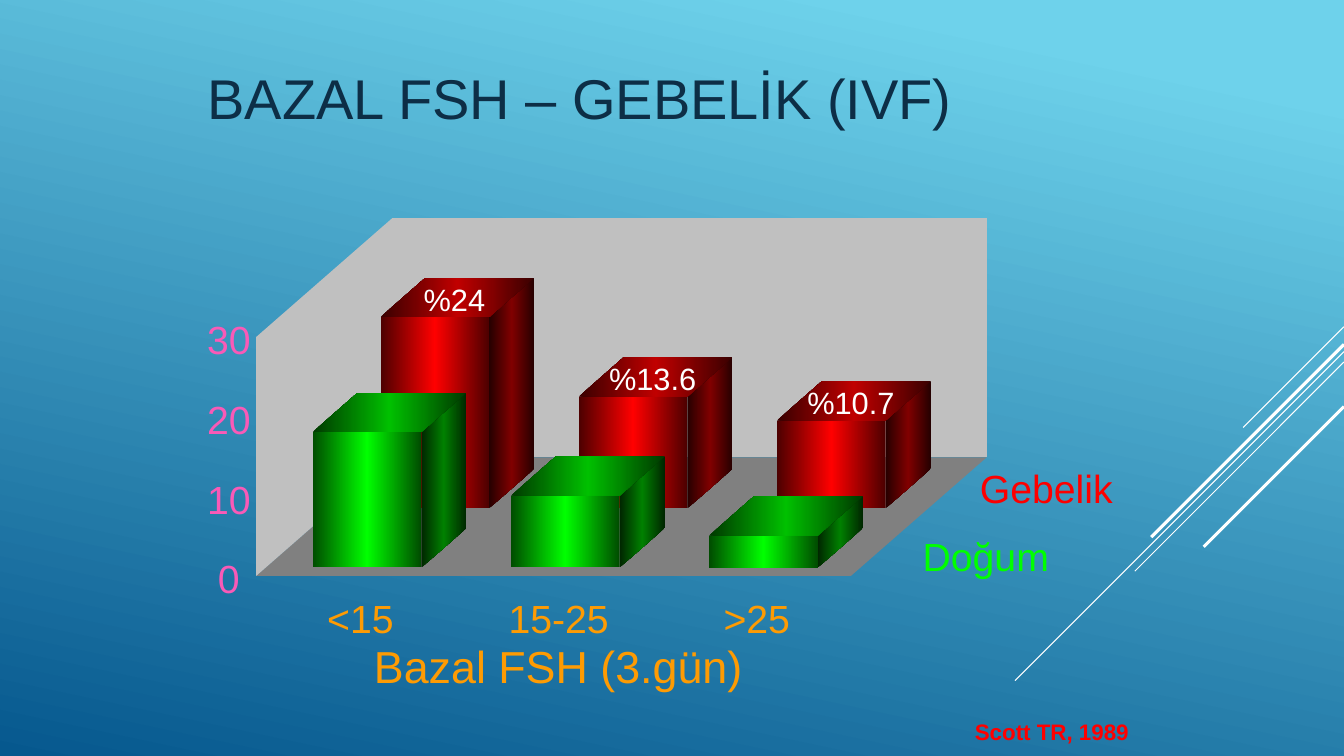
"""Build the slide on basal FSH and IVF pregnancy with a drawn 3D column diagram."""
from copy import deepcopy

from lxml import etree
from pptx import Presentation
from pptx.dml.color import RGBColor
from pptx.enum.shapes import MSO_CONNECTOR
from pptx.enum.text import MSO_ANCHOR, PP_ALIGN
from pptx.oxml.ns import qn
from pptx.util import Emu, Inches, Pt

STRAIGHT = MSO_CONNECTOR.STRAIGHT
MIDDLE = MSO_ANCHOR.MIDDLE
LEFT, CENTER = PP_ALIGN.LEFT, PP_ALIGN.CENTER

THEME = {
    "font": "Arial",
    "sky": ("6ED2EB", "06588E"),
    "title": "0D2E46", "axis": "F95AB7", "category": "FE9B03", "white": "FFFFFF",
    "birth": "00FF00", "pregnancy": "FD0000", "credit": "FF0000",
    "floor": ["808080"], "wall": ["C0C0C0"],
    "red": {"side": ["260000", "800000", "260000"],
            "front": ["4C0000", "FF0000", "4C0000"],
            "top": ["390000", "C00000", "390000"]},
    "green": {"side": ["002600", "008000", "002600"],
              "front": ["004C00", "00FF00", "004C00"],
              "top": ["003900", "00C000", "003900"]},
    "title_size": 40, "caption_size": 32, "label_size": 28,
    "value_size": 22, "credit_size": 16,
}

COLUMNS, ROWS = 80, 45
CELL = Inches(1) / 6

deck = Presentation()
deck.slide_width, deck.slide_height = Emu(int(COLUMNS * CELL)), Emu(int(ROWS * CELL))
page = deck.slides.add_slide(deck.slide_layouts[5])


def face(points, colors):
    """Draw a filled polygon; three colours make a left-to-right gradient."""
    corners = [(x * CELL, y * CELL) for x, y in points]
    builder = page.shapes.build_freeform(*corners[0])
    builder.add_line_segments(corners[1:], close=True)
    shape = builder.convert_to_shape()
    shape.shadow.inherit = False
    shape.line.fill.background()
    if len(colors) == 1:
        shape.fill.solid()
        shape.fill.fore_color.rgb = RGBColor.from_string(colors[0])
        return
    shape.fill.gradient()
    shape.fill.gradient_angle = 0
    stop_list = shape.element.spPr.find(qn("a:gradFill")).find(qn("a:gsLst"))
    stop_list.append(deepcopy(stop_list[-1]))
    for index, stop in enumerate(shape.fill.gradient_stops):
        stop.position = index / 2
        stop.color.rgb = RGBColor.from_string(colors[index])


def label(text, area, size, color, box=None, align=CENTER, wrap=False, spacing=1.0):
    """Write one formatted line in a box placed on the grid."""
    left, top, width, height = [Emu(int(value * CELL)) for value in area]
    box = box or page.shapes.add_textbox(left, top, width, height)
    box.left, box.top, box.width, box.height = left, top, width, height
    frame = box.text_frame
    frame.word_wrap, frame.vertical_anchor = wrap, MIDDLE
    para = frame.paragraphs[0]
    para.text, para.alignment, para.line_spacing = text, align, spacing
    para.font.name, para.font.size = THEME["font"], Pt(THEME[size])
    para.font.color.rgb = RGBColor.from_string(THEME[color])
    return box


sky = page.background.fill
sky.gradient()
sky.gradient_angle = 258
for stop, position, color in zip(sky.gradient_stops, (0.1, 1), THEME["sky"]):
    stop.position = position
    stop.color.rgb = RGBColor.from_string(color)

rays = [(19.45, 6, 0.75), (20.93, 19.58, 0.75), (21.55, 12.45, 0.75),
        (20.5, 11.47, 2.25), (24.2, 8.35, 2.25)]
for row, run, weight in rays:
    ends = (COLUMNS, row, COLUMNS - run, row + run)
    ray = page.shapes.add_connector(STRAIGHT, *[Emu(int(end * CELL)) for end in ends])
    ray.line.width = Pt(weight)
    ray.line.color.rgb = RGBColor.from_string(THEME["white"])
    etree.SubElement(ray.element.spPr, qn("a:effectLst"))

label("BAZAL FSH – GEBELİK (IVF)", (11.76, 2.28, 56.52, 7.5), "title_size", "title",
      box=page.shapes.title, align=LEFT, wrap=True, spacing=0.9)
label("Bazal FSH (3.gün)", (20.28, 38.4, 25.92, 2.82), "caption_size", "category",
      wrap=True, spacing=0.9)

front_x, front_y = 15.25, 34.28
room_width, room_height = 35.4, 14.22
depth_x, depth_y = 8.08, 7.06
back_x, back_y = front_x + depth_x, front_y - depth_y
right_x = back_x + room_width
face([(right_x, back_y), (front_x + room_width, front_y), (front_x, front_y),
      (back_x, back_y)], THEME["floor"])
face([(front_x, front_y), (front_x, front_y - room_height),
      (back_x, back_y - room_height), (back_x, back_y)], THEME["wall"])
face([(back_x, back_y), (back_x, back_y - room_height),
      (right_x, back_y - room_height), (right_x, back_y)], THEME["wall"])

categories = ["<15", "15-25", ">25"]
pitch = room_width / len(categories)
unit = room_height / 30
bar_width, bar_dx, bar_dy = 6.47, depth_x / 3, depth_y / 3
series = [("red", [24, 14, 11], ["%24", "%13.6", "%10.7"], 0.5),
          ("green", [17, 9, 4], [], 0)]
value_labels = []
for tone, heights, captions, lane in series:
    base = front_y - 0.5 - lane * depth_y
    for index, height in enumerate(heights):
        left = front_x + 3.36 + lane * depth_x + index * pitch
        right, top = left + bar_width, base - height * unit
        face([(right + bar_dx, base - bar_dy), (right + bar_dx, top - bar_dy),
              (right, top), (right, base)], THEME[tone]["side"])
        face([(right, base), (right, top), (left, top), (left, base)],
             THEME[tone]["front"])
        face([(right + bar_dx, top - bar_dy), (right, top), (left, top),
              (left + bar_dx, top - bar_dy)], THEME[tone]["top"])
        if captions:
            value_labels.append((captions[index], (left + 1.1, top - 2.5, 6.6, 2.82)))

for index, tick in enumerate(range(0, 31, 10)):
    label(str(tick), (11.7, 32.7 - index * room_height / 3, 3.84, 3.42),
          "label_size", "axis")
for index, category in enumerate(categories):
    label(category, (17.82 + index * pitch, 35.04, 7.26, 3.42), "label_size", "category")

label("Doğum", (53.58, 31.74, 10.2, 3), "label_size", "birth", wrap=True, spacing=0.9)
pregnancy = label("Gebelik", (53.28, 27.18, 15, 4.08), "label_size", "pregnancy",
                  wrap=True, spacing=0.9)
pregnancy.text_frame.margin_left = Inches(0.6)
credit = label("Scott TR, 1989", (57.36, 42.42, 10.5, 2.22), "credit_size", "credit")
credit.text_frame.paragraphs[0].font.bold = True
for text, area in value_labels:
    label(text, area, "value_size", "white", wrap=True)

deck.save("out.pptx")
